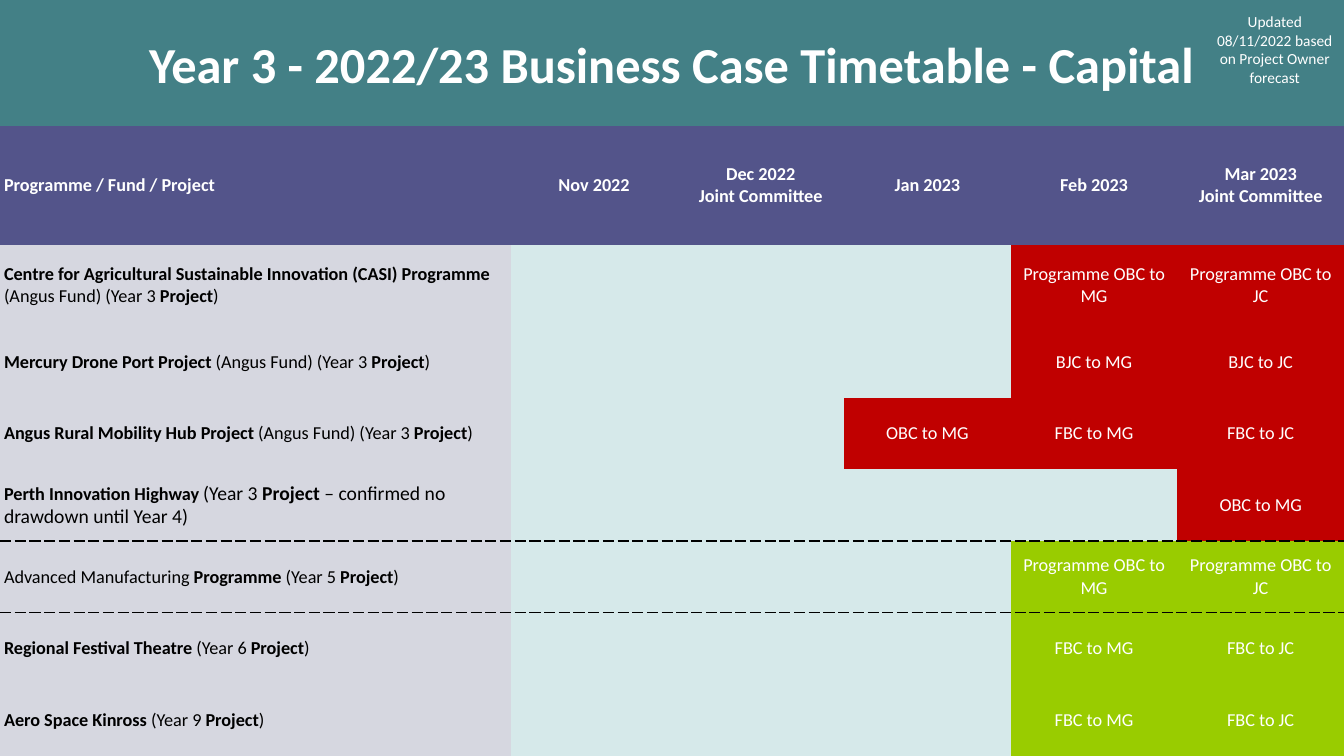
from lxml import etree
from pptx import Presentation
from pptx.dml.color import RGBColor
from pptx.enum.text import MSO_ANCHOR, PP_ALIGN
from pptx.oxml.ns import qn
from pptx.util import Inches, Pt

LEFT, CENTER = PP_ALIGN.LEFT, PP_ALIGN.CENTER
MIDDLE = MSO_ANCHOR.MIDDLE
TITLE_ONLY = 5
NO_GRID_STYLE = "{2D5ABB26-0587-4C30-8999-92F81FD0307C}"

WHITE = RGBColor(0xFF, 0xFF, 0xFF)
BLACK = RGBColor(0x00, 0x00, 0x00)
TEAL = RGBColor(0x43, 0x80, 0x86)
INDIGO = RGBColor(0x53, 0x54, 0x8A)
LAVENDER = RGBColor(0xD6, 0xD7, 0xE0)
PALE_TEAL = RGBColor(0xD6, 0xE9, 0xEA)
RED = RGBColor(0xC0, 0x00, 0x00)
GREEN = RGBColor(0x99, 0xCC, 0x00)

TITLE_SHARE = 1 / 6
LABEL_SHARE = 0.38
HEADER_SHARE = 0.157
FIRST_ROW_SHARE = 0.108

HEADINGS = ["Programme / Fund / Project", "Nov 2022", "Dec 2022\nJoint Committee",
            "Jan 2023", "Feb 2023", "Mar 2023\nJoint Committee"]
PROJECTS = [
    ("**Centre for Agricultural Sustainable Innovation (CASI) Programme **"
     "(Angus Fund) (Year 3 **Project**)", RED, ["Programme OBC to MG", "Programme OBC to JC"]),
    ("**Mercury Drone Port Project **(Angus Fund) (Year 3 **Project**)",
     RED, ["BJC to MG", "BJC to JC"]),
    ("**Angus Rural Mobility Hub Project **(Angus Fund) (Year 3 **Project**)",
     RED, ["OBC to MG", "FBC to MG", "FBC to JC"]),
    ("**Perth Innovation Highway **(Year 3 **Project** – confirmed no drawdown until Year 4)",
     RED, ["OBC to MG"]),
    ("Advanced Manufacturing **Programme **(Year 5 **Project**)",
     GREEN, ["Programme OBC to MG", "Programme OBC to JC"]),
    ("**Regional Festival Theatre **(Year 6 **Project**)", GREEN, ["FBC to MG", "FBC to JC"]),
    ("**Aero Space Kinross **(Year 9 **Project**)", GREEN, ["FBC to MG", "FBC to JC"]),
]
LAST_CONFIRMED_ROW = 4


def write(frame, text, size=13, color=WHITE, align=CENTER, bold=False, tail_size=None):
    for number, line in enumerate(text.split("\n")):
        para = frame.paragraphs[0] if number == 0 else frame.add_paragraph()
        para.alignment = align
        for index, part in enumerate(line.split("**")):
            if part:
                span = para.add_run()
                span.text = part
                span.font.name = "Calibri"
                span.font.size = Pt(tail_size if tail_size and index > 1 else size)
                span.font.bold = bold or index % 2 == 1
                span.font.color.rgb = color


class TimetableSlide:
    def __init__(self, deck):
        self.width, self.height = deck.slide_width, deck.slide_height
        self.page = deck.slides.add_slide(deck.slide_layouts[TITLE_ONLY])

    def area(self, left, top, width, height):
        return (round(left * self.width), round(top * self.height),
                round(width * self.width), round(height * self.height))

    def title(self, text, height):
        box = self.page.shapes.title
        box.left, box.top, box.width, box.height = self.area(0, 0, 1, height)
        box.fill.solid()
        box.fill.fore_color.rgb = TEAL
        box.text_frame.vertical_anchor = MIDDLE
        write(box.text_frame, text, size=36, bold=True)

    def note(self, text, left, top, width, height):
        box = self.page.shapes.add_textbox(*self.area(left, top, width, height))
        box.text_frame.word_wrap = True
        write(box.text_frame, text, size=11)

    def table(self, top, column_shares, row_shares):
        frame = self.page.shapes.add_table(
            len(row_shares), len(column_shares), *self.area(0, top, 1, 1 - top))
        table = frame.table
        table.horz_banding = False
        table._tbl.tblPr.find(qn("a:tableStyleId")).text = NO_GRID_STYLE
        for column, share in zip(table.columns, column_shares):
            column.width = round(share * self.width)
        for row, share in zip(table.rows, row_shares):
            row.height = round(share * self.height)
        return table

    def cell(self, cell, text, fill, **style):
        cell.fill.solid()
        cell.fill.fore_color.rgb = fill
        cell.vertical_anchor = MIDDLE
        cell.margin_left = cell.margin_right = Inches(0.04)
        cell.margin_top = cell.margin_bottom = Inches(0.02)
        write(cell.text_frame, text, **style)

    def dashed_edge(self, cell, side):
        edge = etree.Element(qn(f"a:ln{side}"), w=str(Pt(1)))
        fill = etree.SubElement(edge, qn("a:solidFill"))
        etree.SubElement(fill, qn("a:srgbClr"), val=str(BLACK))
        etree.SubElement(edge, qn("a:prstDash"), val="sysDash")
        cell._tc.get_or_add_tcPr().insert(0, edge)


def main():
    deck = Presentation()
    deck.slide_width, deck.slide_height = Inches(13.33), Inches(7.5)
    slide = TimetableSlide(deck)
    slide.title("Year 3 - 2022/23 Business Case Timetable - Capital", TITLE_SHARE)

    months = len(HEADINGS) - 1
    month_share = (1 - LABEL_SHARE) / months
    plain_rows = len(PROJECTS) - 1
    row_share = (1 - TITLE_SHARE - HEADER_SHARE - FIRST_ROW_SHARE) / plain_rows
    table = slide.table(TITLE_SHARE, [LABEL_SHARE] + [month_share] * months,
                        [HEADER_SHARE, FIRST_ROW_SHARE] + [row_share] * plain_rows)

    for column, heading in enumerate(HEADINGS):
        slide.cell(table.cell(0, column), heading, INDIGO, bold=True,
                   align=CENTER if column else LEFT)
    for row, (project, status, stages) in enumerate(PROJECTS, start=1):
        slide.cell(table.cell(row, 0), project, LAVENDER, color=BLACK, align=LEFT,
                   tail_size=14 if row == LAST_CONFIRMED_ROW else None)
        waiting = months - len(stages)
        for column, stage in enumerate([""] * waiting + stages, start=1):
            slide.cell(table.cell(row, column), stage, status if stage else PALE_TEAL)
    for column in range(len(HEADINGS)):
        slide.dashed_edge(table.cell(LAST_CONFIRMED_ROW, column), "B")
        slide.dashed_edge(table.cell(LAST_CONFIRMED_ROW + 1, column), "T")

    slide.note("Updated 08/11/2022 based on Project Owner forecast", 0.897, 0.01, 0.103, 0.139)
    deck.save("out.pptx")


if __name__ == "__main__":
    main()
